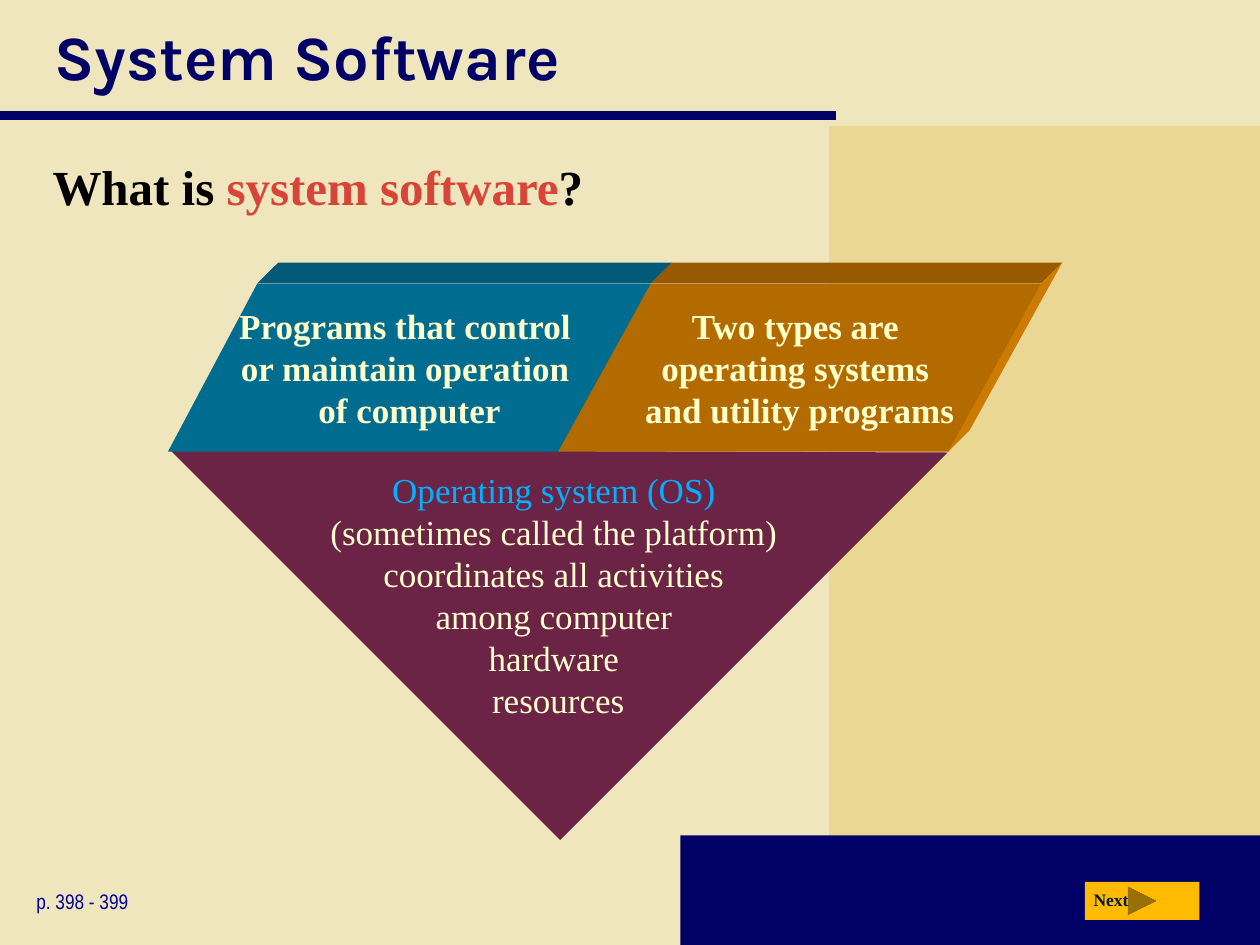
"""Build the System Software slide with its faceted gem diagram."""
from dataclasses import dataclass

from lxml import etree
from pptx import Presentation
from pptx.dml.color import RGBColor
from pptx.enum.shapes import MSO_CONNECTOR, MSO_SHAPE
from pptx.enum.text import MSO_ANCHOR, PP_ALIGN
from pptx.oxml.ns import qn
from pptx.util import Pt

RECTANGLE = MSO_SHAPE.RECTANGLE
PARALLELOGRAM = MSO_SHAPE.PARALLELOGRAM
RIGHT_TRIANGLE = MSO_SHAPE.RIGHT_TRIANGLE
NEXT_BUTTON = MSO_SHAPE.ACTION_BUTTON_FORWARD_OR_NEXT
STRAIGHT = MSO_CONNECTOR.STRAIGHT
MIDDLE, TOP = MSO_ANCHOR.MIDDLE, MSO_ANCHOR.TOP
LEFT, CENTER = PP_ALIGN.LEFT, PP_ALIGN.CENTER

CREAM = RGBColor(0xF0, 0xE6, 0xBE)
SAND = RGBColor(0xE9, 0xD7, 0x93)
NAVY = RGBColor(0x00, 0x00, 0x66)
PAGE_BLUE = RGBColor(0x00, 0x00, 0x99)
BLACK = RGBColor(0x00, 0x00, 0x00)
RED = RGBColor(0xD9, 0x44, 0x39)
INK = RGBColor(0x00, 0x19, 0x32)
SKY = RGBColor(0x01, 0xB0, 0xFF)
IVORY = RGBColor(0xFF, 0xFF, 0xCC)
GOLD = RGBColor(0xFF, 0xBA, 0x02)
PLUM = RGBColor(0x6B, 0x23, 0x46)
TEAL = RGBColor(0x00, 0x6C, 0x90)
DARK_TEAL = RGBColor(0x00, 0x5A, 0x78)
ORANGE = RGBColor(0xB3, 0x6B, 0x00)
DARK_ORANGE = RGBColor(0x98, 0x5A, 0x00)
LIGHT_ORANGE = RGBColor(0xCC, 0x7A, 0x00)

SERIF = "Times New Roman"
FACET_TOP, FACET_WIDTH, FACET_HEIGHT, DEPTH = 162, 276, 96, 12


@dataclass
class Span:
    text: str
    color: RGBColor


@dataclass
class Style:
    size: float
    font: str = SERIF
    bold: bool = False
    align: int = LEFT
    before: float = 0


@dataclass
class Block:
    place: tuple
    fill: RGBColor
    kind: int = RECTANGLE
    turn: float = 0


@dataclass
class Label:
    place: tuple
    spans: list
    style: Style


@dataclass
class Facet:
    left: float
    slant: float
    text: str
    front: RGBColor
    top: RGBColor
    side: RGBColor | None = None


BACKDROP = [
    Block((473.8, 72, 246.2, 468), SAND),
    Block((388.8, 477.4, 331.2, 62.6), NAVY),
]
GEM_POINT = Block((162.7, 100.1, 313.2, 315.4), PLUM, RIGHT_TRIANGLE, 315)
BUTTON = Block((619.9, 504, 65.5, 21.6), GOLD, NEXT_BUTTON)
LABELS = [
    Label((23, 85.7, 676, 58.3),
          [Span("What is ", BLACK), Span("system software", RED), Span("?", BLACK)],
          Style(28, bold=True, before=4)),
    Label((617.8, 504.7, 36.7, 19.4), [Span("Next", INK)], Style(10, bold=True)),
    Label((13.7, 504, 121.7, 21.6), [Span("p. 398 - 399", PAGE_BLUE)],
          Style(12, "Arial Narrow")),
    Label((103, 264.2, 432, 151.2),
          [Span("Operating system (OS) \v", SKY),
           Span("(sometimes called the platform) \vcoordinates all activities \v"
                "among computer \vhardware \vresources", IVORY)],
          Style(20, align=CENTER, before=1)),
]
FACETS = [
    Facet(96, 51, "Programs that control \vor maintain operation \vof computer",
          TEAL, DARK_TEAL),
    Facet(319, 53, "Two types are \voperating systems \vand utility programs",
          ORANGE, DARK_ORANGE, LIGHT_ORANGE),
]


def write(frame, spans: list, style: Style, anchor=TOP, wrap: bool = True) -> None:
    """Fill a text frame with one paragraph of coloured spans."""
    frame.text = "".join(span.text for span in spans)
    frame.word_wrap = wrap
    frame.vertical_anchor = anchor
    paragraph = frame.paragraphs[0]
    paragraph.alignment = style.align
    paragraph.space_before = Pt(style.before)
    if len(spans) > 1:
        paragraph.clear()
        for span in spans:
            lines = span.text.split("\v")
            for number, line in enumerate(lines):
                if number:
                    paragraph.add_line_break()
                if line:
                    run = paragraph.add_run()
                    run.text = line
                    run.font.color.rgb = span.color
    for run in paragraph.runs:
        run.font.size, run.font.name, run.font.bold = Pt(style.size), style.font, style.bold
        if len(spans) == 1:
            run.font.color.rgb = spans[0].color


def paint(shape, color: RGBColor) -> None:
    """Give a shape a flat fill without line or shadow."""
    shape.shadow.inherit = False
    shape.fill.solid()
    shape.fill.fore_color.rgb = color
    shape.line.fill.background()


def add_block(page, block: Block):
    """Draw a preset shape."""
    shape = page.shapes.add_shape(block.kind, *map(Pt, block.place))
    shape.rotation = block.turn
    paint(shape, block.fill)
    return shape


def add_face(page, corners: list, color: RGBColor) -> None:
    """Draw a polygon through the corners."""
    points = [(Pt(x), Pt(y)) for x, y in corners]
    builder = page.shapes.build_freeform(*points[0])
    builder.add_line_segments(points[1:])
    paint(builder.convert_to_shape(), color)


def add_facet(page, facet: Facet) -> None:
    """Draw a slanted slab with its top, side and front faces."""
    right, bottom = facet.left + FACET_WIDTH, FACET_TOP + FACET_HEIGHT
    start, end = (facet.left + facet.slant, FACET_TOP), (right, FACET_TOP)
    foot = (right - facet.slant, bottom)
    back_start, back_end, back_foot = [(x + DEPTH, y - DEPTH) for x, y in (start, end, foot)]
    add_face(page, [start, back_start, back_end, end], facet.top)
    if facet.side is not None:
        add_face(page, [end, back_end, back_foot, foot], facet.side)
    place = (facet.left, FACET_TOP, FACET_WIDTH, FACET_HEIGHT)
    front = add_block(page, Block(place, facet.front, PARALLELOGRAM))
    front.adjustments[0] = facet.slant / FACET_HEIGHT
    style = Style(20, bold=True, align=CENTER)
    write(front.text_frame, [Span(facet.text, IVORY)], style, MIDDLE, False)


def add_rule(page) -> None:
    """Draw the line under the title."""
    rule = page.shapes.add_connector(STRAIGHT, Pt(0), Pt(66), Pt(478), Pt(66))
    rule.line.color.rgb, rule.line.width = NAVY, Pt(5)
    etree.SubElement(rule._element.spPr, qn("a:effectLst"))


def main() -> None:
    """Assemble and save the slide."""
    deck = Presentation()
    deck.slide_width, deck.slide_height = Pt(720), Pt(540)
    page = deck.slides.add_slide(deck.slide_layouts[5])
    page.background.fill.solid()
    page.background.fill.fore_color.rgb = CREAM
    title = page.shapes.title
    title.left, title.top, title.width, title.height = map(Pt, (23.8, 0, 676, 63.4))
    write(title.text_frame, [Span("System Software", NAVY)], Style(36, "Karla", True), MIDDLE)
    for block in BACKDROP:
        add_block(page, block)
    add_rule(page)
    for block in (GEM_POINT, BUTTON):
        add_block(page, block)
    for facet in FACETS:
        add_facet(page, facet)
    for label in LABELS:
        write(page.shapes.add_textbox(*map(Pt, label.place)).text_frame, label.spans, label.style)
    deck.save("out.pptx")


if __name__ == "__main__":
    main()
